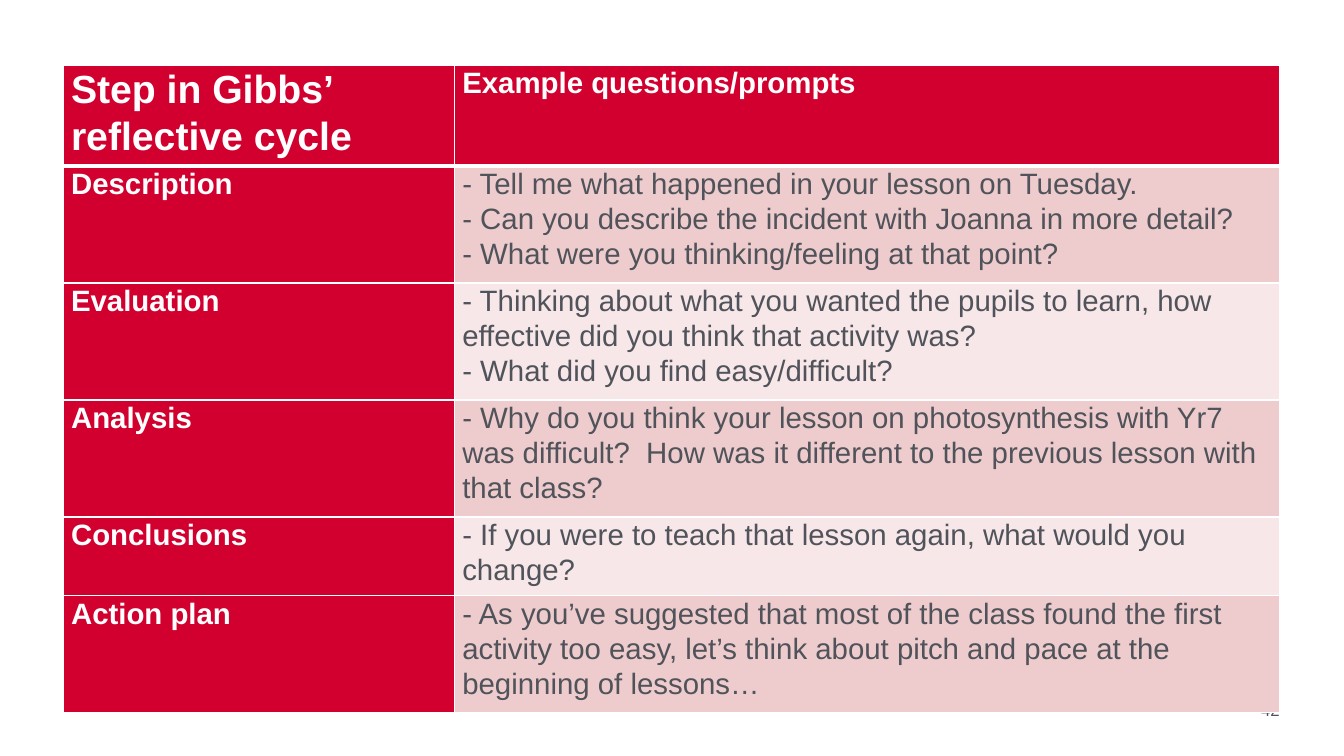
from lxml import etree
from pptx import Presentation
from pptx.dml.color import RGBColor
from pptx.enum.text import PP_ALIGN
from pptx.oxml.ns import qn
from pptx.util import Cm, Pt

RIGHT = PP_ALIGN.RIGHT
BLANK = 6
FONT = "Arial"
COLORS = {
    "white": "FFFFFF",
    "red": "D2002E",
    "text": "50535A",
    "dark": "EECCCD",
    "light": "F7E7E8",
}
COLS = [9.86, 20.8]
HEADS = ["Step in Gibbs’ reflective cycle", "Example questions/prompts"]

# Step, row height in cm, prompts
STEPS = [
    ("Description", 2.95, [
        "- Tell me what happened in your lesson on Tuesday.",
        "- Can you describe the incident with Joanna in more detail?",
        "- What were you thinking/feeling at that point?",
    ]),
    ("Evaluation", 2.95, [
        "- Thinking about what you wanted the pupils to learn, how "
        "effective did you think that activity was?",
        "- What did you find easy/difficult?",
    ]),
    ("Analysis", 2.95, [
        "- Why do you think your lesson on photosynthesis with Yr7 was "
        "difficult?  How was it different to the previous lesson with "
        "that class?",
    ]),
    ("Conclusions", 1.98, [
        "- If you were to teach that lesson again, what would you change?",
    ]),
    ("Action plan", 2.95, [
        "- As you’ve suggested that most of the class found the first "
        "activity too easy, let’s think about pitch and pace at the "
        "beginning of lessons…",
    ]),
]


def rgb(name):
    return RGBColor.from_string(COLORS[name])


def add_run(para, text, size, color, bold=False):
    run = para.add_run()
    run.text = text
    font = run.font
    font.name = FONT
    font.size = Pt(size)
    font.bold = bold
    font.color.rgb = rgb(color)


def set_edges(cell, base):
    """Draw white lines round a cell; base is the bottom width in points."""
    props = cell._tc.get_or_add_tcPr()
    widths = {"lnL": 1, "lnR": 1, "lnT": 1, "lnB": base}
    for spot, (tag, width) in enumerate(widths.items()):
        line = etree.Element(qn(f"a:{tag}"), w=str(Pt(width)))
        fill = etree.SubElement(line, qn("a:solidFill"))
        etree.SubElement(fill, qn("a:srgbClr"), val=COLORS["white"])
        props.insert(spot, line)


def fill_cell(cell, lines, fill, color="white", size=21, bold=True, base=1):
    cell.fill.solid()
    cell.fill.fore_color.rgb = rgb(fill)
    cell.margin_left = cell.margin_right = Cm(0.2)
    cell.margin_top = cell.margin_bottom = 0
    set_edges(cell, base)
    frame = cell.text_frame
    for i, text in enumerate(lines):
        para = frame.add_paragraph() if i else frame.paragraphs[0]
        para.line_spacing = 1.07
        add_run(para, text, size, color, bold)


def add_steps(slide):
    heights = [1.98] + [height for _, height, _ in STEPS]
    table = slide.shapes.add_table(
        len(heights), len(COLS), Cm(1.59), Cm(1.64),
        Cm(sum(COLS)), Cm(sum(heights))).table
    for col, width in zip(table.columns, COLS):
        col.width = Cm(width)
    for row, height in zip(table.rows, heights):
        row.height = Cm(height)

    # Header row
    for i, (text, size) in enumerate(zip(HEADS, (28, 21))):
        fill_cell(table.cell(0, i), [text], "red", size=size, base=3)

    # Steps with banded prompts
    for i, (step, _, prompts) in enumerate(STEPS, 1):
        band = "dark" if i % 2 else "light"
        fill_cell(table.cell(i, 0), [step], "red")
        fill_cell(table.cell(i, 1), prompts, band, "text", bold=False)


def add_number(slide, text):
    box = slide.shapes.add_textbox(Cm(29.74), Cm(17.63), Cm(2.51), Cm(0.71))
    frame = box.text_frame
    frame.word_wrap = True
    frame.margin_left = frame.margin_right = 0
    frame.margin_top = frame.margin_bottom = 0
    para = frame.paragraphs[0]
    para.alignment = RIGHT
    para.space_after = Pt(6)
    add_run(para, text, 12, "text")


def main():
    deck = Presentation()
    deck.slide_width, deck.slide_height = Cm(33.87), Cm(19.05)
    slide = deck.slides.add_slide(deck.slide_layouts[BLANK])
    # The page number lies behind the table
    add_number(slide, "42")
    add_steps(slide)
    deck.save("out.pptx")


if __name__ == "__main__":
    main()
